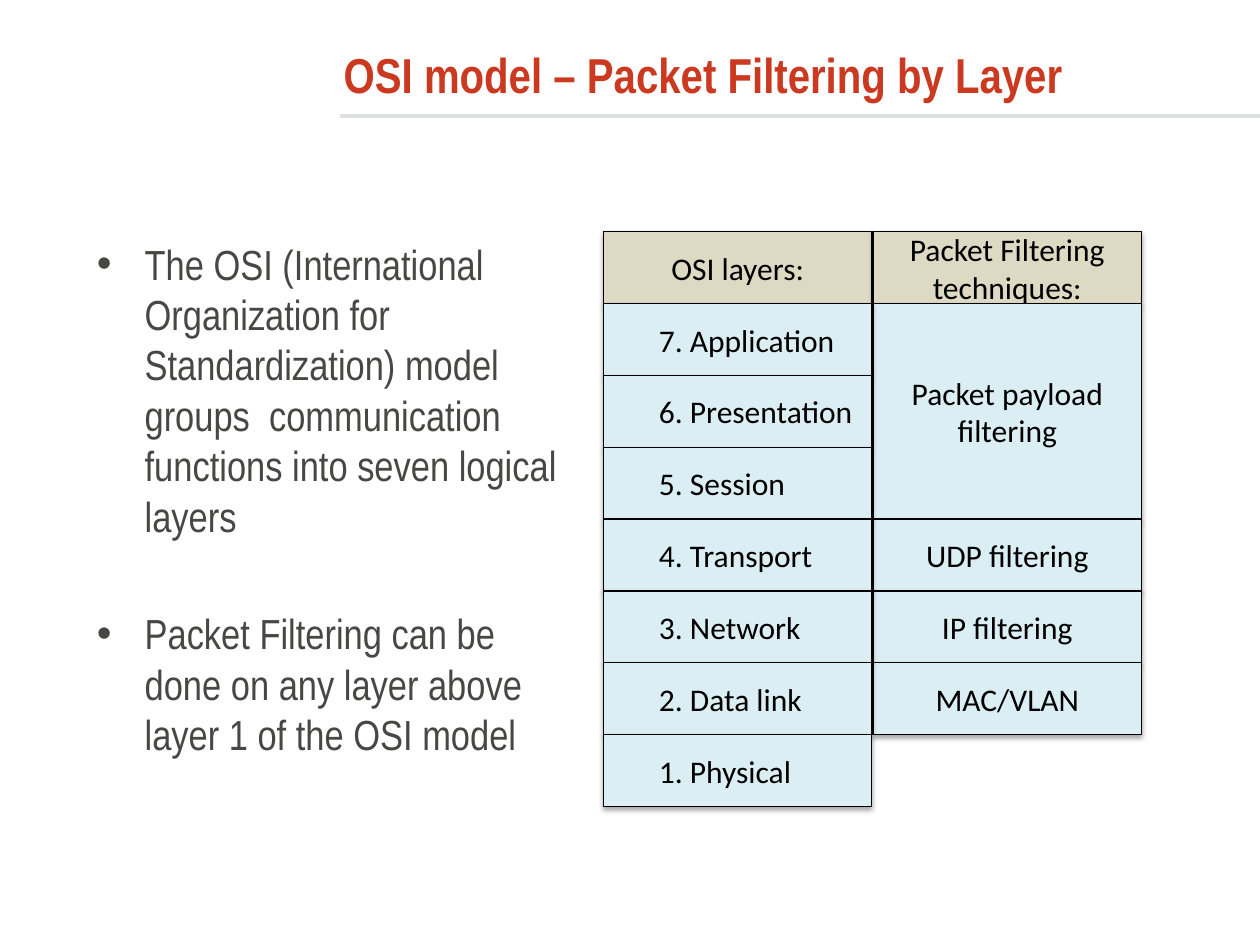
"""Build a slide on packet filtering by OSI layer."""
from lxml import etree
from pptx import Presentation
from pptx.dml.color import RGBColor
from pptx.enum.shapes import MSO_CONNECTOR, MSO_SHAPE
from pptx.enum.text import MSO_ANCHOR, PP_ALIGN
from pptx.oxml.ns import qn
from pptx.util import Inches, Pt

RECT, LINE = MSO_SHAPE.RECTANGLE, MSO_CONNECTOR.STRAIGHT
LEFT, CENTER, MIDDLE = PP_ALIGN.LEFT, PP_ALIGN.CENTER, MSO_ANCHOR.MIDDLE

COLORS = {"title": "CB3920", "rule": "DCDFDE", "body": "474746",
          "head": "DDD9C3", "cell": "DBEEF4", "ink": "000000"}
TITLE = "OSI model – Packet Filtering by Layer"
POINTS = [
    "The OSI (International Organization for Standardization) model "
    "groups  communication functions into seven logical layers",
    "Packet Filtering can be done on any layer above layer 1 of the OSI model",
]
HEADS = ["OSI layers:", "Packet Filtering techniques:"]
LAYERS = ["Application", "Presentation", "Session", "Transport",
          "Network", "Data link", "Physical"]
FILTERS = [("Packet payload filtering", 3), ("UDP filtering", 1),
           ("IP filtering", 1), ("MAC/VLAN", 1)]
GRID_X, GRID_Y, CELL_W, CELL_H = 4.79, 1.84, 2.13, 0.57


def color(name):
    return RGBColor.from_string(COLORS[name])


def style(para, face, size, tint, bold=False):
    font = para.font
    font.name, font.size, font.bold = face, Pt(size), bold
    font.color.rgb = color(tint)


def add_box(slide, *place):
    box = slide.shapes.add_textbox(*map(Inches, place))
    box.text_frame.word_wrap = True
    return box.text_frame


def add_bullet(para):
    props = para._p.get_or_add_pPr()
    props.set("marL", str(Inches(0.38)))
    props.set("indent", str(Inches(-0.38)))
    etree.SubElement(props, qn("a:buFont"), typeface="Arial")
    etree.SubElement(props, qn("a:buChar"), char="•")


def add_shadow(shape):
    shape.shadow.inherit = False
    effects = shape._element.spPr.find(qn("a:effectLst"))
    outer = etree.SubElement(effects, qn("a:outerShdw"), blurRad=str(Pt(3.1)),
                             dist=str(Pt(1.8)), dir="5400000", rotWithShape="0")
    tint = etree.SubElement(outer, qn("a:srgbClr"), val=COLORS["ink"])
    etree.SubElement(tint, qn("a:alpha"), val="35000")


def add_cell(slide, text, col, row, span=1, fill="cell", align=CENTER):
    place = (GRID_X + col * (CELL_W + 0.01), GRID_Y + row * CELL_H,
             CELL_W, span * CELL_H)
    cell = slide.shapes.add_shape(RECT, *map(Inches, place))
    add_shadow(cell)
    cell.fill.solid()
    cell.fill.fore_color.rgb = color(fill)
    cell.line.color.rgb = color("ink")
    cell.line.width = Pt(0.75)
    frame = cell.text_frame
    frame.word_wrap, frame.vertical_anchor = True, MIDDLE
    if align == LEFT:
        frame.margin_left = Inches(0.44)
    para = frame.paragraphs[0]
    para.text, para.alignment = text, align
    style(para, "Calibri", 18, "ink")


def main():
    deck = Presentation()
    deck.slide_width, deck.slide_height = Inches(10), Inches(7.5)
    slide = deck.slides.add_slide(deck.slide_layouts[6])

    rule = slide.shapes.add_connector(LINE, *map(Inches, (2.7, 0.92, 10, 0.92)))
    rule.line.color.rgb = color("rule")
    rule.line.width = Pt(2)
    etree.SubElement(rule._element.spPr, qn("a:effectLst"))

    frame = add_box(slide, 2.63, 0.15, 6.87, 0.88)
    frame.vertical_anchor = MIDDLE
    frame.text = TITLE
    style(frame.paragraphs[0], "Arial Narrow", 28, "title", True)

    frame = add_box(slide, 0.67, 1.84, 3.94, 4.95)
    for num, text in enumerate(POINTS):
        para = frame.add_paragraph() if num else frame.paragraphs[0]
        para.text = text
        add_bullet(para)
        para.space_before = Pt(38.5 if num else 0)
        style(para, "Arial Narrow", 24, "body")

    for col, text in enumerate(HEADS):
        add_cell(slide, text, col, 0, fill="head")
    row = 1
    for text, span in FILTERS:
        add_cell(slide, text, 1, row, span)
        row += span
    for row, name in enumerate(LAYERS, 1):
        add_cell(slide, f"{len(LAYERS) + 1 - row}. {name}", 0, row, align=LEFT)

    deck.save("out.pptx")


if __name__ == "__main__":
    main()
